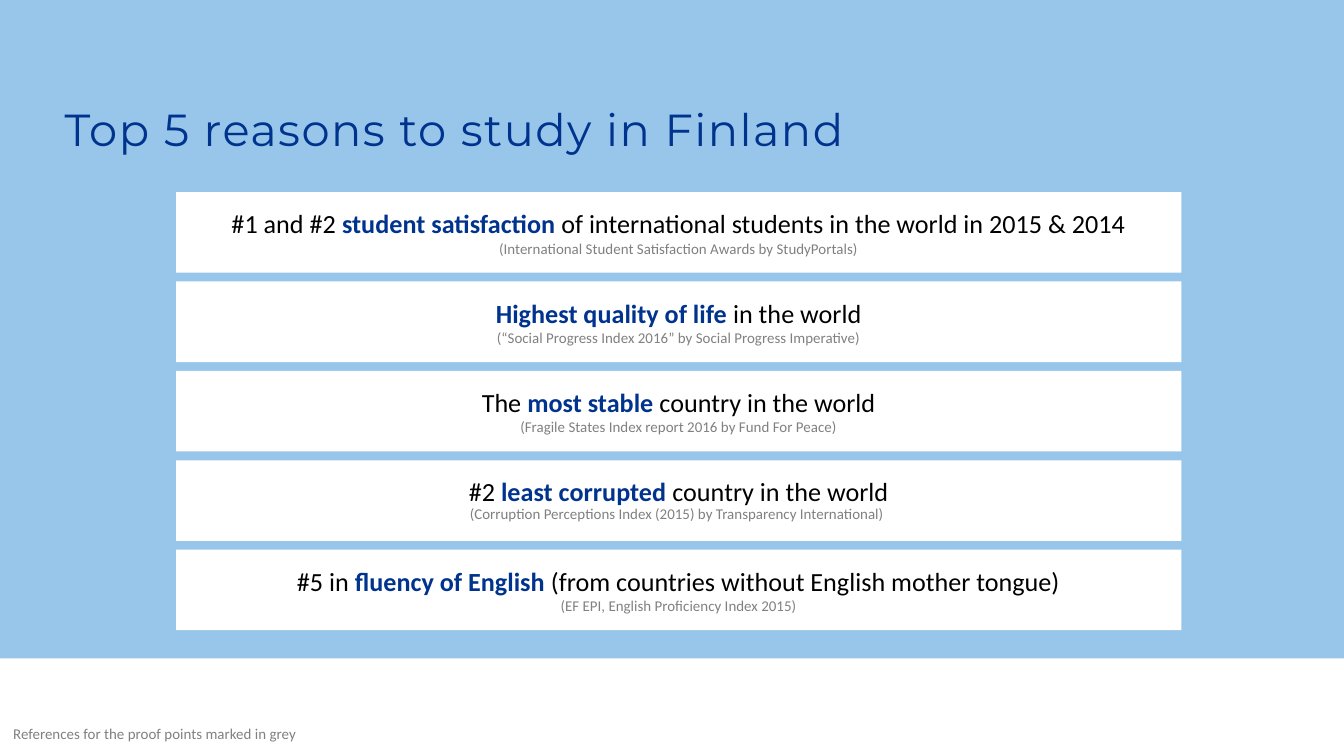
"""Build the slide on five reasons to study in Finland."""
from pptx import Presentation
from pptx.dml.color import RGBColor
from pptx.enum.shapes import MSO_SHAPE
from pptx.enum.text import MSO_ANCHOR, MSO_AUTO_SIZE, PP_ALIGN
from pptx.util import Inches, Pt

HUE = {"sky": "98C6EA", "navy": "00338D", "white": "FFFFFF",
       "black": "000000", "grey": "808080"}
WIDE = 10
HIGH = WIDE * 9 / 16
TITLE = "Top 5 reasons to study in Finland"
NOTE = "References for the proof points marked in grey"
CARDS = [
    ("#1 and #2 ", "student satisfaction ",
     "of international students in the world in 2015 & 2014",
     "(International Student Satisfaction Awards by StudyPortals)", 1),
    ("", "Highest quality of life ", "in the world",
     "(“Social Progress Index 2016” by Social Progress Imperative)", 1),
    ("The ", "most stable ", "country in the world",
     "(Fragile States Index report 2016 by Fund For Peace)", 1),
    ("#2 ", "least corrupted ", "country in the world",
     "(Corruption Perceptions Index (2015) by Transparency International) ", 0.9),
    ("#5 in ", "fluency of English ",
     "(from countries without English mother tongue)",
     "(EF EPI, English Proficiency Index 2015)", 1),
]
LEFT, SPAN, TALL = 1.31, 7.48, 0.6
FIRST, LAST = 1.43, 4.09
STEP = (LAST - FIRST) / (len(CARDS) - 1)


def rgb(name):
    """Return the named colour."""
    return RGBColor.from_string(HUE[name])


def write(para, text, size=8, hue="grey", bold=False, face="Calibri",
          align=PP_ALIGN.LEFT, lead=1, track=0):
    """Add a formatted run to a paragraph."""
    para.alignment, para.line_spacing = align, lead
    run = para.add_run()
    run.text = text
    font = run.font
    font.size, font.bold, font.name = Pt(size), bold, face
    font.color.rgb = rgb(hue)
    if track:
        run._r.get_or_add_rPr().set("spc", str(track))


def block(slide, hue, *area):
    """Add a plain filled rectangle."""
    shape = slide.shapes.add_shape(MSO_SHAPE.RECTANGLE, *map(Inches, area))
    shape.shadow.inherit = False
    shape.fill.solid()
    shape.fill.fore_color.rgb = rgb(hue)
    shape.line.fill.background()
    return shape


def main():
    """Lay out the slide and save it."""
    deck = Presentation()
    deck.slide_width, deck.slide_height = Inches(WIDE), Inches(HIGH)
    slide = deck.slides.add_slide(deck.slide_layouts[5])

    title = slide.shapes.title
    band = block(slide, "sky", 0, 0, WIDE, 4.9)
    title._element.addprevious(band._element)
    title.left, title.top, title.width, title.height = map(
        Inches, (0.38, 0.17, 9.24, 1.04))
    frame = title.text_frame
    frame.auto_size = MSO_AUTO_SIZE.NONE
    frame.vertical_anchor = MSO_ANCHOR.BOTTOM
    write(frame.paragraphs[0], TITLE, size=24, hue="navy",
          face="Montserrat", lead=0.87, track=80)

    for row, (start, key, rest, proof, lead) in enumerate(CARDS):
        card = block(slide, "white", LEFT, FIRST + row * STEP, SPAN, TALL)
        frame = card.text_frame
        frame.vertical_anchor = MSO_ANCHOR.MIDDLE
        look = {"align": PP_ALIGN.CENTER, "lead": lead}
        claim = frame.paragraphs[0]
        for text, hue in ((start, "black"), (key, "navy"), (rest, "black")):
            if text:
                write(claim, text, size=14, hue=hue, bold=hue == "navy", **look)
        write(frame.add_paragraph(), proof, **look)

    note = slide.shapes.add_textbox(*map(Inches, (0, 5.36, 4.74, 0.22)))
    note.text_frame.word_wrap = True
    note.text_frame.auto_size = MSO_AUTO_SIZE.SHAPE_TO_FIT_TEXT
    write(note.text_frame.paragraphs[0], NOTE, lead=0.9)
    deck.save("out.pptx")


if __name__ == "__main__":
    main()
